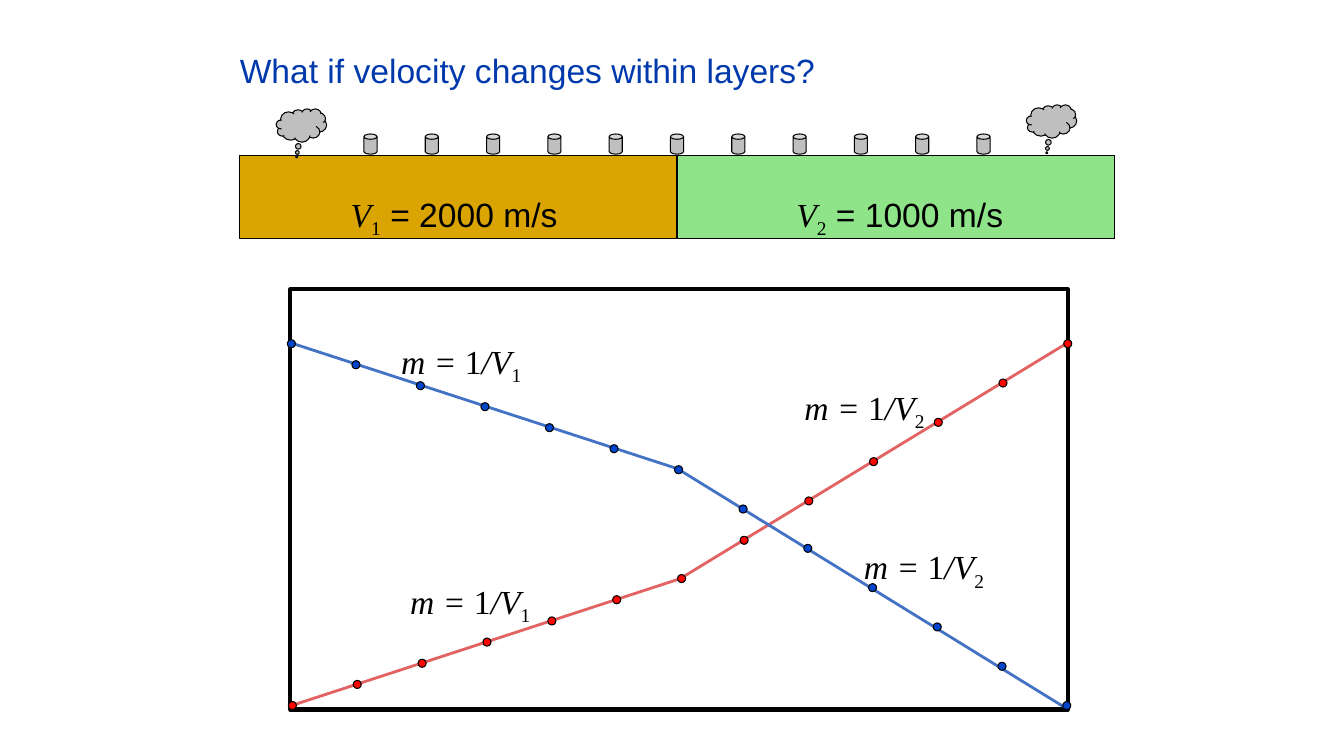
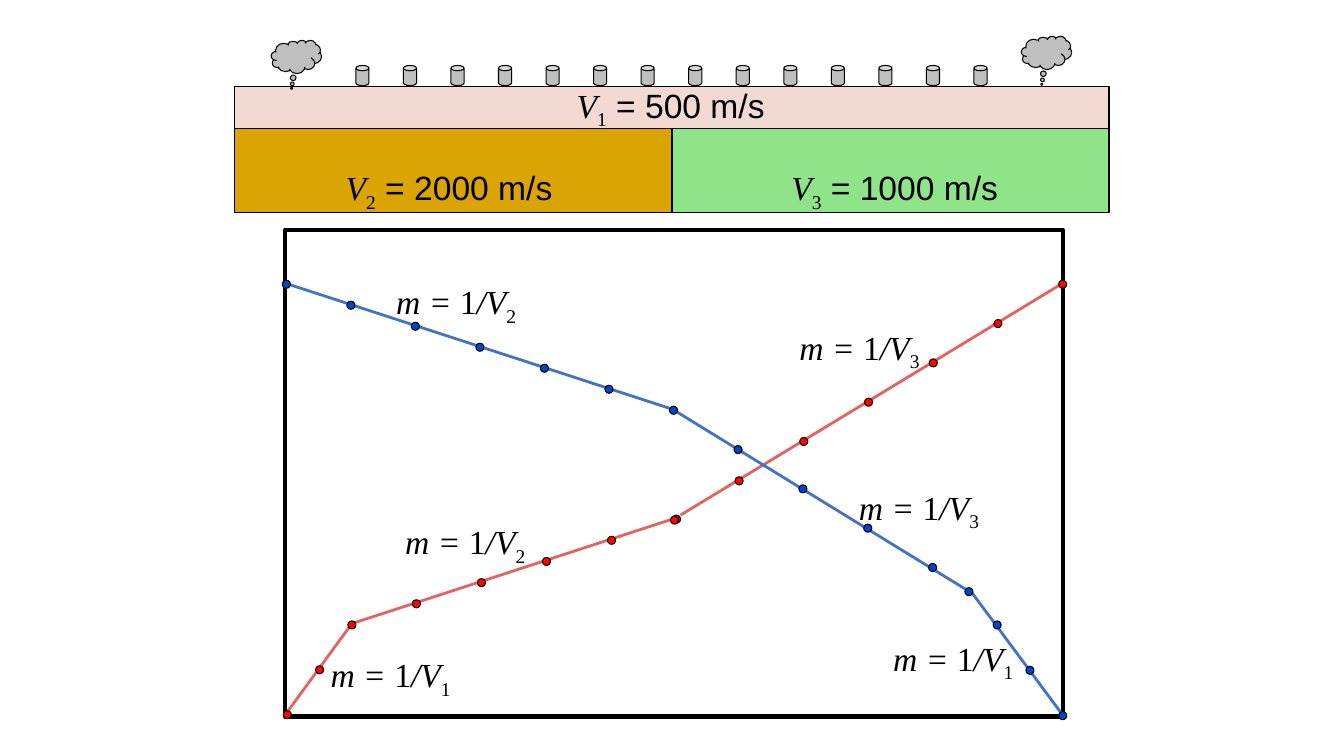
from lxml import etree
from pptx import Presentation
from pptx.dml.color import RGBColor
from pptx.enum import shapes, text
from pptx.oxml.ns import qn
from pptx.util import Inches, Pt

rgb = RGBColor.from_string
SHAPE = shapes.MSO_SHAPE
BLACK, GREY, TITLE = "000000", "BFBFBF", "0039AC"
GOLD, GREEN, PINK = "DAA403", "8FE388", "F2D9D2"
RED_LINE, BLUE_LINE = "E36262", "4472C4"
RED_DOT, BLUE_DOT = "FF0501", "0046CD"
SERIF, SANS = "Times New Roman", "Arial"
DOT = (0.08, 0.08)
GEOPHONE = (0.13, 0.2)
SHOT = (0.5, 0.33)


def add_part(slide, kind, place, size, fill=None, width=0.75, adjustments=()):
    """Add an outlined shape, hollow when it has no fill."""
    part = slide.shapes.add_shape(kind, *map(Inches, (*place, *size)))
    part.shadow.inherit = False
    if fill:
        part.fill.solid()
        part.fill.fore_color.rgb = rgb(fill)
    else:
        part.fill.background()
    part.line.color.rgb = rgb(BLACK)
    part.line.width = Pt(width)
    for i, value in enumerate(adjustments):
        part.adjustments[i] = value


def add_words(slide, place, width, runs, color=BLACK):
    """Add one line of text from (words, font, italic, subscript) runs."""
    box = slide.shapes.add_textbox(*map(Inches, (*place, width, 0.5)))
    frame = box.text_frame
    frame.word_wrap = False
    frame.auto_size = text.MSO_AUTO_SIZE.SHAPE_TO_FIT_TEXT
    for words, font, italic, subscript in runs:
        run = frame.paragraphs[0].add_run()
        run.text = words
        run.font.name = font
        run.font.size = Pt(24)
        run.font.italic = italic
        run.font.color.rgb = rgb(color)
        if subscript:
            run._r.get_or_add_rPr().set("baseline", "-25000")


# Rows of dots and geophones: first place, last place, count.
# Layers: place, size, fill. Velocities: place, width, index, speed.
# Slopes: place, velocity index.
sections = [
    {
        "title": "What if velocity changes within layers?",
        "graph": ((2.88, 2.87), (7.71, 4.17)),
        "travel times": [
            (RED_LINE, (2.86, 7.01), (6.75, 5.74)),
            (RED_LINE, (6.78, 5.72), (10.59, 3.4)),
            (BLUE_LINE, (10.58, 7.03), (6.72, 4.65)),
            (BLUE_LINE, (6.72, 4.65), (2.88, 3.4)),
        ],
        "layers": [
            ((2.38, 1.54), (4.33, 0.83), GOLD),
            ((6.72, 1.54), (4.33, 0.83), GREEN),
        ],
        "shots": [(2.74, 1.08), (10.18, 1.04)],
        "geophones": ((3.61, 1.33), (9.69, 1.33), 11),
        "velocities": [
            ((3.38, 1.87), 2.27, 1, 2000),
            ((7.8, 1.87), 2.27, 2, 1000),
        ],
        "arrivals": [
            (RED_DOT, (2.86, 6.96), (6.72, 5.7), 7),
            (RED_DOT, (7.34, 5.32), (10.55, 3.37), 6),
            (BLUE_DOT, (2.85, 3.37), (6.69, 4.62), 7),
            (BLUE_DOT, (7.33, 5.01), (10.54, 6.96), 6),
        ],
        "slopes": [
            ((3.88, 3.33), 1), ((3.97, 5.71), 1),
            ((7.88, 3.79), 2), ((8.47, 5.37), 2),
        ],
    },
    {
        "title": None,
        "graph": ((2.83, 2.28), (7.71, 4.83)),
        "travel times": [
            (BLUE_LINE, (10.53, 7.08), (9.61, 5.84)),
            (RED_LINE, (2.83, 7.09), (3.48, 6.2)),
            (RED_LINE, (3.48, 6.19), (6.7, 5.14)),
            (RED_LINE, (6.75, 5.11), (10.54, 2.81)),
            (BLUE_LINE, (9.6, 5.86), (6.67, 4.06)),
            (BLUE_LINE, (6.67, 4.06), (2.83, 2.81)),
        ],
        "layers": [
            ((2.33, 1.28), (4.33, 0.83), GOLD),
            ((6.67, 1.28), (4.33, 0.83), GREEN),
            ((2.33, 0.86), (8.67, 0.42), PINK),
        ],
        "shots": [(2.69, 0.4), (10.13, 0.36)],
        "geophones": ((3.53, 0.65), (9.66, 0.65), 14),
        "velocities": [
            ((5.62, 0.79), 2.08, 1, 500),
            ((3.33, 1.61), 2.27, 2, 2000),
            ((7.75, 1.61), 2.27, 3, 1000),
        ],
        "arrivals": [
            (RED_DOT, (2.81, 7.05), (3.45, 6.16), 3),
            (RED_DOT, (4.09, 5.95), (6.67, 5.11), 5),
            (RED_DOT, (7.29, 4.73), (10.5, 2.78), 6),
            (RED_DOT, (6.65, 5.12), (6.65, 5.12), 1),
            (BLUE_DOT, (2.8, 2.78), (6.64, 4.03), 7),
            (BLUE_DOT, (7.28, 4.42), (9.21, 5.59), 4),
            (BLUE_DOT, (9.57, 5.83), (9.57, 5.83), 1),
            (BLUE_DOT, (9.85, 6.16), (10.5, 7.06), 3),
        ],
        "slopes": [
            ((3.83, 2.74), 2), ((3.92, 5.12), 2),
            ((7.83, 3.19), 3), ((8.42, 4.78), 3),
            ((8.76, 6.28), 1), ((3.18, 6.44), 1),
        ],
    },
]

deck = Presentation()
deck.slide_width, deck.slide_height = Inches(13.33), Inches(7.5)

for section in sections:
    slide = deck.slides.add_slide(deck.slide_layouts[6])
    add_part(slide, SHAPE.RECTANGLE, *section["graph"], width=3)

    for color, start, end in section["travel times"]:
        segment = slide.shapes.add_connector(
            shapes.MSO_CONNECTOR.STRAIGHT, *map(Inches, (*start, *end)))
        segment.line.color.rgb = rgb(color)
        segment.line.width = Pt(2)
        etree.SubElement(segment._element.spPr, qn("a:effectLst"))

    if section["title"]:
        add_words(slide, (2.28, 0.45), 5.97,
                  [(section["title"], SANS, False, False)], TITLE)

    for place, size, fill in section["layers"]:
        add_part(slide, SHAPE.RECTANGLE, place, size, fill)
    for place in section["shots"]:
        add_part(slide, SHAPE.CLOUD_CALLOUT, place, SHOT, GREY,
                 adjustments=(-0.094, 0.943))

    rows = [(SHAPE.CAN, GEOPHONE, (0.404,), GREY, *section["geophones"])]
    rows += [(SHAPE.OVAL, DOT, (), *row) for row in section["arrivals"]]
    for kind, size, adjustments, fill, first, last, count in rows:
        for i in range(count):
            share = i / max(count - 1, 1)
            place = [a + (b - a) * share for a, b in zip(first, last)]
            add_part(slide, kind, place, size, fill, adjustments=adjustments)

    for place, width, index, speed in section["velocities"]:
        add_words(slide, place, width, [
            ("V", SERIF, True, False),
            (str(index), SERIF, False, True),
            (f" = {speed} m/s", SANS, False, False),
        ])
    for place, index in section["slopes"]:
        add_words(slide, place, 1.41, [
            ("m = ", SERIF, True, False),
            ("1", SERIF, False, False),
            ("/V", SERIF, True, False),
            (str(index), SERIF, False, True),
        ])

deck.save("out.pptx")
